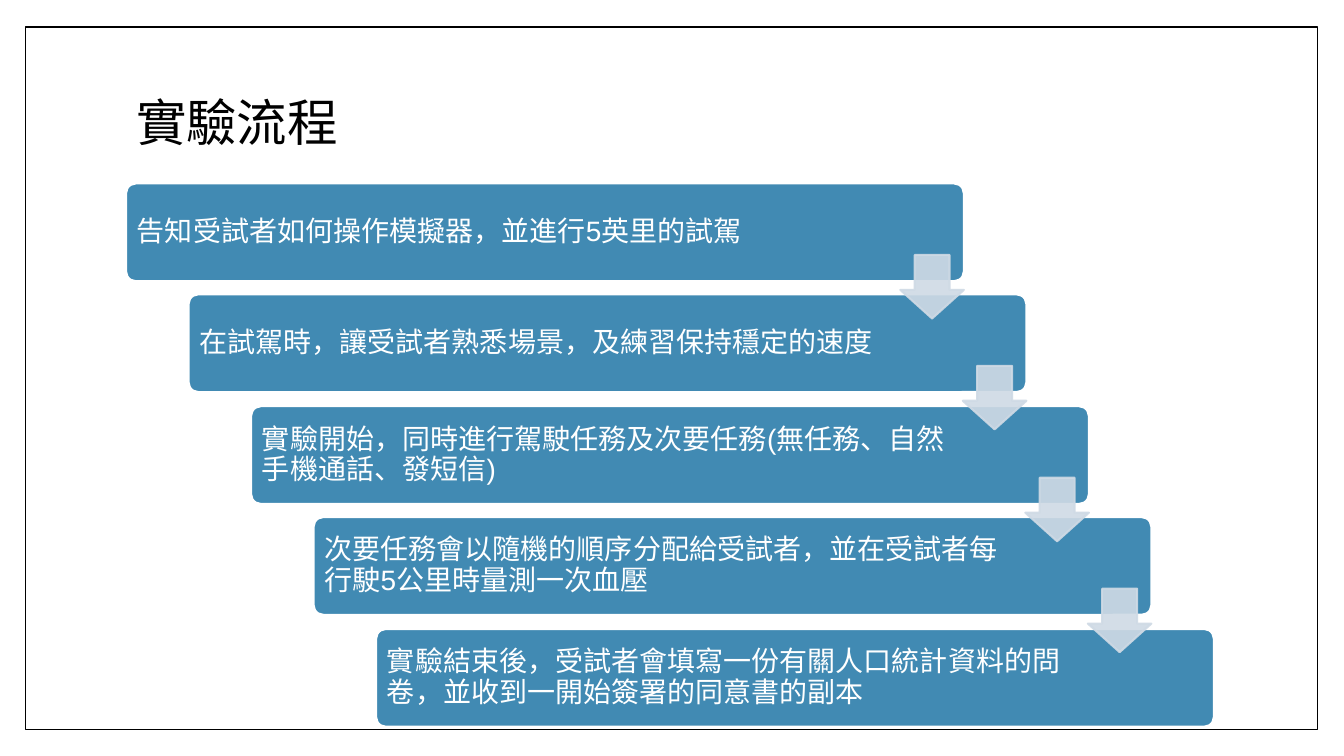
import pptx
import pptx.util
import pptx.dml.color
import pptx.enum.shapes
import pptx.enum.text
import pptx.oxml
import pptx.oxml.ns
import lxml.etree

PX = 9144  # 100 px to the inch
SHAPES = pptx.enum.shapes.MSO_SHAPE
MIDDLE = pptx.enum.text.MSO_ANCHOR.MIDDLE
LEFT = pptx.enum.text.PP_ALIGN.LEFT


class Theme:
    black = pptx.dml.color.RGBColor.from_string("000000")
    white = pptx.dml.color.RGBColor.from_string("FFFFFF")
    step = pptx.dml.color.RGBColor.from_string("418AB3")
    arrow = pptx.dml.color.RGBColor.from_string("CFDAE5")
    arrow_opacity = 90
    title_font, body_font = "Montserrat", "Arial"
    title_size, body_size = pptx.util.Pt(36), pptx.util.Pt(20)
    frame_line, shape_line = pptx.util.Pt(1), pptx.util.Pt(1.5)


def add_block(kind, box, fill, line, line_width):
    shape = slide.shapes.add_shape(kind, *(value * PX for value in box))
    shape.shadow.inherit = False
    shape.fill.solid()
    shape.fill.fore_color.rgb = fill
    shape.line.color.rgb = line
    shape.line.width = line_width
    return shape


def write_text(shape, text, font_name, size, color):
    frame = shape.text_frame
    frame.text = text
    frame.word_wrap = True
    frame.vertical_anchor = MIDDLE
    paragraph = frame.paragraphs[0]
    paragraph.alignment = LEFT
    paragraph.line_spacing = 0.9
    paragraph.font.name = font_name
    paragraph.font.size = size
    paragraph.font.color.rgb = color


presentation = pptx.Presentation()
presentation.slide_width = 1333 * PX
presentation.slide_height = 750 * PX
slide = presentation.slides.add_slide(presentation.slide_layouts[5])

# Title
title = slide.shapes.title
title.left, title.top, title.width, title.height = (
    value * PX for value in (125, 67, 1080, 115))
write_text(title, "實驗流程", Theme.title_font, Theme.title_size, Theme.black)

# Page frame, placed behind the title
page_frame = add_block(SHAPES.RECTANGLE, (25, 27, 1282, 697),
                       Theme.white, Theme.black, Theme.frame_line)
title.element.addprevious(page_frame.element)

# Staircase of steps
steps = [
    "告知受試者如何操作模擬器，並進行5英里的試駕",
    "在試駕時，讓受試者熟悉場景，及練習保持穩定的速度",
    "實驗開始，同時進行駕駛任務及次要任務(無任務、自然手機通話、發短信)",
    "次要任務會以隨機的順序分配給受試者，並在受試者每行駛5公里時量測一次血壓",
    "實驗結束後，受試者會填寫一份有關人口統計資料的問卷，並收到一開始簽署的同意書的副本",
]
STEP_RIGHT = 62
STEP_DOWN = 110.4
for index, text in enumerate(steps):
    box = (125 + index * STEP_RIGHT, 182 + round(index * STEP_DOWN), 831, 97)
    step = add_block(SHAPES.ROUNDED_RECTANGLE, box,
                     Theme.step, Theme.white, Theme.shape_line)
    step.adjustments[0] = 0.1
    write_text(step, text, Theme.body_font, Theme.body_size, Theme.white)
    step.text_frame.margin_left = 8 * PX
    step.text_frame.margin_right = 132 * PX  # keeps text clear of the arrow
    step.text_frame.margin_top = step.text_frame.margin_bottom = 8 * PX

# Arrows from each step to the next
for index in range(len(steps) - 1):
    box = (893 + index * STEP_RIGHT, 253 + round(index * STEP_DOWN), 63, 63)
    arrow = add_block(SHAPES.DOWN_ARROW, box,
                      Theme.arrow, Theme.arrow, Theme.shape_line)
    arrow.adjustments[0] = 0.55
    arrow.adjustments[1] = 0.45
    for color in arrow.element.spPr.iter(pptx.oxml.ns.qn("a:srgbClr")):
        alpha = lxml.etree.SubElement(color, pptx.oxml.ns.qn("a:alpha"))
        alpha.set("val", str(Theme.arrow_opacity * 1000))

presentation.save("out.pptx")
